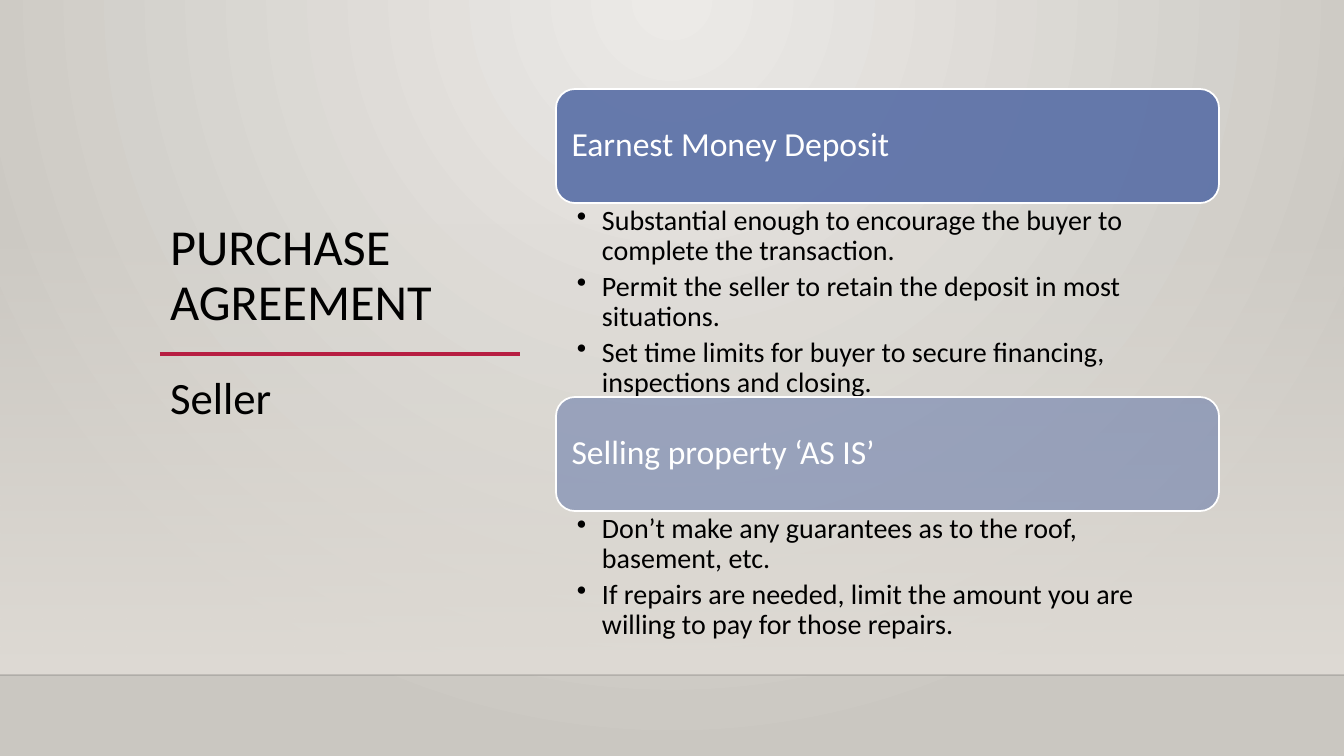
from dataclasses import dataclass

import lxml.etree
import pptx
import pptx.dml.color
import pptx.enum.shapes
import pptx.enum.text
import pptx.oxml
import pptx.oxml.ns
import pptx.util

PX = 914400 / 100.8
WIDTH, HEIGHT = 1344, 756


@dataclass(frozen=True)
class Theme:
    font: str = "Calibri"
    text: str = "000000"
    white: str = "FFFFFF"
    accent: str = "B71E42"
    panel: str = "586EA6"
    glow: str = "ECEAE7"
    edge: str = "CAC7C1"
    wall: str = "DFDBD5"
    floor_line: str = "000001"
    title_size: int = 36
    subtitle_size: int = 32
    header_size: int = 24
    list_size: int = 20


THEME = Theme()

# Each section: header, header opacity in percent, list height, points
SECTIONS = [
    ("Earnest Money Deposit", 90, 194, [
        "Substantial enough to encourage the buyer to complete the transaction.",
        "Permit the seller to retain the deposit in most situations.",
        "Set time limits for buyer to secure financing, inspections and closing.",
    ]),
    ("Selling property ‘AS IS’", 50, 166, [
        "Don’t make any guarantees as to the roof, basement, etc.",
        "If repairs are needed, limit the amount you are willing to pay for those repairs.",
    ]),
]


def px(*lengths):
    return [pptx.util.Emu(round(length * PX)) for length in lengths]


def rgb(color):
    return pptx.dml.color.RGBColor.from_string(color)


def set_opacity(element, percent):
    """Make the first solid colour inside the element partly transparent."""
    color = element.xpath(".//a:solidFill/a:srgbClr")[0]
    alpha = lxml.etree.SubElement(color, pptx.oxml.ns.qn("a:alpha"))
    alpha.set("val", str(percent * 1000))


def set_gradient(element, stops, direction):
    """Replace the first solid fill with stops of (position, colour, opacity)."""
    stop_xml = "".join(
        f'<a:gs pos="{position * 1000}"><a:srgbClr val="{color}">'
        f'<a:alpha val="{opacity * 1000}"/></a:srgbClr></a:gs>'
        for position, color, opacity in stops)
    gradient = pptx.oxml.parse_xml(
        f'<a:gradFill {pptx.oxml.ns.nsdecls("a")} rotWithShape="1">'
        f'<a:gsLst>{stop_xml}</a:gsLst>{direction}</a:gradFill>')
    solid = element.xpath(".//a:solidFill")[0]
    solid.getparent().replace(solid, gradient)


def add_bullet(paragraph):
    properties = paragraph._p.get_or_add_pPr()
    indent = px(25)[0]
    properties.set("marL", str(indent))
    properties.set("indent", str(-indent))
    bullet = lxml.etree.SubElement(properties, pptx.oxml.ns.qn("a:buChar"))
    bullet.set("char", "•")


def write_text(shape, lines, size, color, anchor, insets, spacing=0.9, bullets=False):
    frame = shape.text_frame
    frame.word_wrap = True
    frame.vertical_anchor = anchor
    (frame.margin_left, frame.margin_top,
     frame.margin_right, frame.margin_bottom) = px(*insets)
    frame.text = "\n".join(lines)
    for paragraph in frame.paragraphs:
        if bullets:
            add_bullet(paragraph)
            paragraph.space_after = pptx.util.Pt(size * 0.2)
        paragraph.alignment = pptx.enum.text.PP_ALIGN.LEFT
        paragraph.line_spacing = spacing
        for run in paragraph.runs:
            run.font.name = THEME.font
            run.font.size = pptx.util.Pt(size)
            run.font.color.rgb = rgb(color)


def add_rule(slide, left, top, width, color, weight):
    rule = slide.shapes.add_connector(
        pptx.enum.shapes.MSO_CONNECTOR.STRAIGHT, *px(left, top, left + width, top))
    rule.line.color.rgb = rgb(color)
    rule.line.width = pptx.util.Pt(weight)
    lxml.etree.SubElement(rule.element.spPr, pptx.oxml.ns.qn("a:effectLst"))
    return rule


def add_backdrop(slide, wall_top, floor_top):
    # Radial glow from the top centre
    slide.background.fill.solid()
    set_gradient(
        slide.element, [(0, THEME.glow, 100), (100, THEME.edge, 100)],
        '<a:path path="circle"><a:fillToRect l="43000" t="0" r="43000" b="100000"/></a:path>')

    # Wall that fades in towards the floor
    wall = slide.shapes.add_shape(
        pptx.enum.shapes.MSO_SHAPE.RECTANGLE, *px(0, wall_top, WIDTH, floor_top - wall_top))
    wall.shadow.inherit = False
    wall.line.fill.background()
    wall.fill.solid()
    set_gradient(wall.element, [(0, THEME.wall, 0), (100, THEME.wall, 100)],
                 '<a:lin ang="5400000" scaled="0"/>')

    # Floor edge
    edge = add_rule(slide, 0, floor_top, WIDTH, THEME.floor_line, 1)
    set_opacity(edge.element, 20)


def add_title_block(slide, left, top, width, height):
    """Title above a rule at mid-height, subtitle below it."""
    middle, gap = top + height // 2, 18
    anchors = pptx.enum.text.MSO_ANCHOR
    insets = (10, 5, 10, 5)
    add_rule(slide, left, middle, width, THEME.accent, 2.5)
    title = slide.shapes.add_textbox(*px(left, top, width, height // 2 - gap))
    write_text(title, ["PURCHASE AGREEMENT"], THEME.title_size, THEME.text,
               anchors.BOTTOM, insets)
    subtitle = slide.shapes.add_textbox(*px(left, middle, width, height // 2 - gap))
    write_text(subtitle, ["Seller"], THEME.subtitle_size, THEME.text,
               anchors.TOP, insets, spacing=1.2)


def add_sections(slide, left, top, width, header_height):
    """Stack of headers, each followed by its bullet list."""
    anchors = pptx.enum.text.MSO_ANCHOR
    for heading, opacity, list_height, points in SECTIONS:
        # Header panel
        header = slide.shapes.add_shape(
            pptx.enum.shapes.MSO_SHAPE.ROUNDED_RECTANGLE,
            *px(left, top, width, header_height))
        header.shadow.inherit = False
        header.fill.solid()
        header.fill.fore_color.rgb = rgb(THEME.panel)
        set_opacity(header.element, opacity)
        header.line.color.rgb = rgb(THEME.white)
        header.line.width = pptx.util.Pt(1.25)
        write_text(header, [heading], THEME.header_size, THEME.white,
                   anchors.MIDDLE, (10, 10, 10, 10))
        top += header_height

        # Bullet list
        bullet_list = slide.shapes.add_textbox(*px(left, top, width, list_height))
        write_text(bullet_list, points, THEME.list_size, THEME.text,
                   anchors.TOP, (21, 3, 16, 3), bullets=True)
        top += list_height


def main():
    presentation = pptx.Presentation()
    presentation.slide_width, presentation.slide_height = px(WIDTH, HEIGHT)
    slide = presentation.slides.add_slide(presentation.slide_layouts[6])
    add_backdrop(slide, wall_top=223, floor_top=675)
    add_title_block(slide, left=160, top=88, width=360, height=532)
    add_sections(slide, left=556, top=89, width=663, header_height=114)
    presentation.save("out.pptx")


if __name__ == "__main__":
    main()
